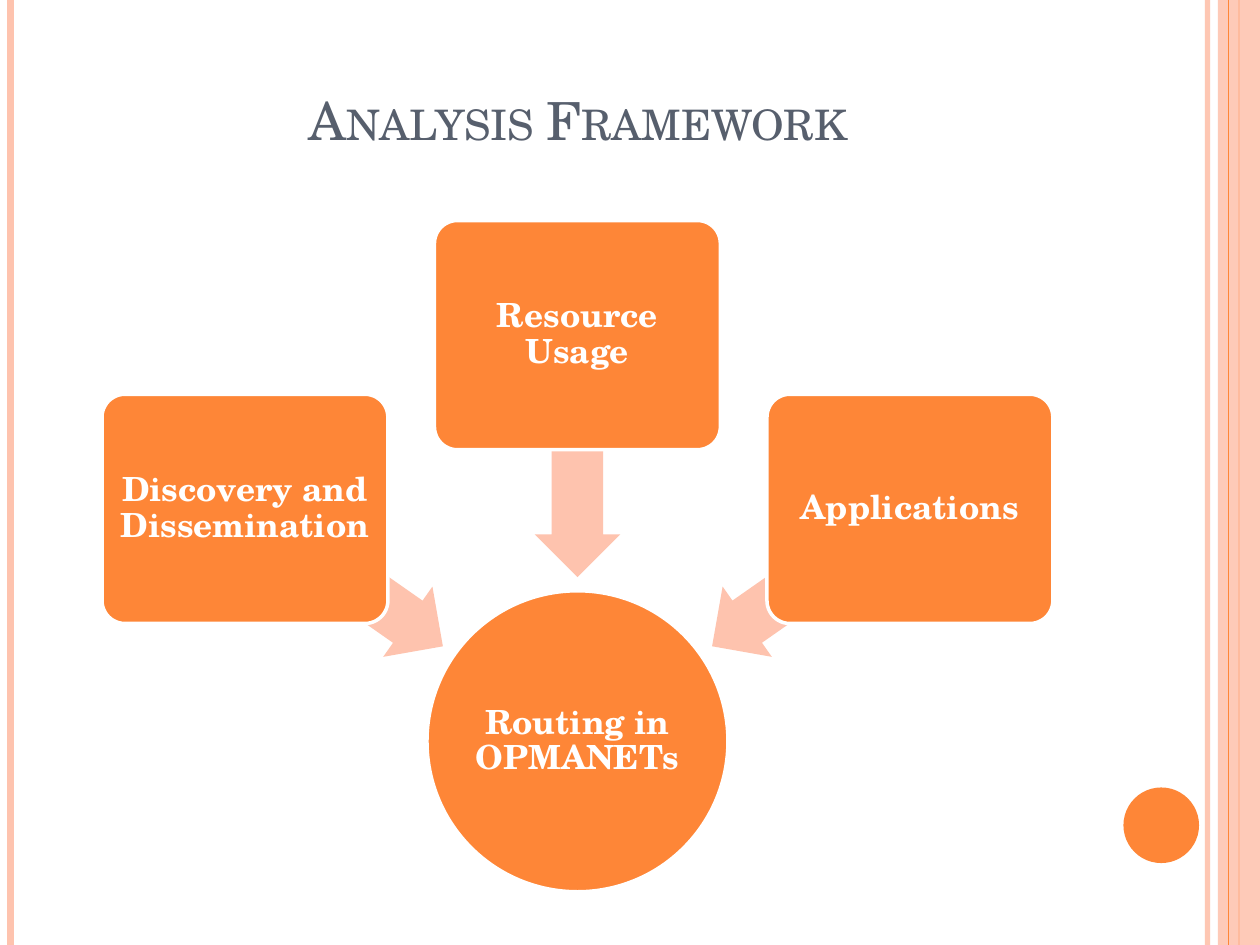
from dataclasses import dataclass

from lxml.etree import SubElement
from pptx import Presentation
from pptx.dml.color import RGBColor
from pptx.enum.shapes import MSO_CONNECTOR, MSO_SHAPE
from pptx.enum.text import MSO_ANCHOR, PP_ALIGN
from pptx.oxml.ns import qn
from pptx.util import Pt


@dataclass(frozen=True)
class Theme:
    font: str = "TeX Gyre Schola"
    accent: str = "FE8637"
    tint: str = "FEC3AE"
    white: str = "FFFFFF"
    title: str = "575F6D"
    title_size: float = 30
    node_size: float = 19
    outline: float = 2


class Deck:
    """Draws themed elements, measured in points, on the current slide."""

    def __init__(self, prs, theme):
        self.theme = theme
        self.height = prs.slide_height.pt
        self.s = prs.slides.add_slide(prs.slide_layouts[6])

    def paint(self, fill, color, opacity=100):
        fill.solid()
        fill.fore_color.rgb = RGBColor.from_string(color)
        if opacity < 100:
            clr = next(fill._xPr.iter(qn("a:srgbClr")))
            SubElement(clr, qn("a:alpha")).set("val", str(opacity * 1000))

    def label(self, sp, text, size, color, anchor, bold=False):
        tf = sp.text_frame
        tf.word_wrap = True
        tf.vertical_anchor = anchor
        tf.text = text
        p = tf.paragraphs[0]
        p.alignment = PP_ALIGN.CENTER
        r = p.runs[0]
        r.font.name = self.theme.font
        r.font.size = Pt(size)
        r.font.bold = bold
        r.font.color.rgb = RGBColor.from_string(color)
        return p

    def rule(self, x, width, color, opacity=100):
        line = self.s.shapes.add_connector(
            MSO_CONNECTOR.STRAIGHT, Pt(x), Pt(0), Pt(x), Pt(self.height))
        line.line.width = Pt(width)
        self.paint(line.line.fill, color, opacity)
        SubElement(line._element.spPr, qn("a:effectLst"))

    def shape(self, kind, x, y, w, h, color, opacity=100):
        sp = self.s.shapes.add_shape(kind, Pt(x), Pt(y), Pt(w), Pt(h))
        sp.shadow.inherit = False
        self.paint(sp.fill, color, opacity)
        sp.line.fill.background()
        return sp

    def title(self, text, x, y, w, h):
        sp = self.s.shapes.add_textbox(Pt(x), Pt(y), Pt(w), Pt(h))
        p = self.label(sp, text, self.theme.title_size, self.theme.title,
                       MSO_ANCHOR.BOTTOM)
        p.runs[0].font._element.set("cap", "small")

    def node(self, kind, text, x, y, w, h, inset):
        t = self.theme
        sp = self.shape(kind, x, y, w, h, t.accent)
        if kind == MSO_SHAPE.ROUNDED_RECTANGLE:
            sp.adjustments[0] = 0.1
        self.paint(sp.line.fill, t.white)
        sp.line.width = Pt(t.outline)
        tf = sp.text_frame
        tf.margin_left = tf.margin_right = Pt(inset)
        tf.margin_top = tf.margin_bottom = Pt(inset)
        p = self.label(sp, text, t.node_size, t.white, MSO_ANCHOR.MIDDLE, True)
        p.line_spacing = 0.9

    def arrow(self, cx, cy, w, h, rotation):
        sp = self.shape(MSO_SHAPE.LEFT_ARROW, cx - w / 2, cy - h / 2, w, h,
                        self.theme.tint)
        sp.adjustments[0] = 0.6
        sp.adjustments[1] = 0.5
        sp.rotation = rotation


def main():
    prs = Presentation()
    prs.slide_width, prs.slide_height = Pt(720), Pt(540)
    theme = Theme()
    deck = Deck(prs, theme)

    deck.rule(690, 3, theme.tint, 93)
    deck.rule(6, 4.5, theme.tint)
    deck.rule(708, 1.5, theme.accent)
    deck.shape(MSO_SHAPE.RECTANGLE, 696, 0, 24, 540, theme.tint, 87)
    deck.rule(702, 0.75, theme.accent)
    deck.shape(MSO_SHAPE.OVAL, 642, 450, 43.2, 43.2, theme.accent)
    deck.title("Analysis Framework", 36, 0, 588, 90)

    center, hub = 330, 172
    box_w, box_h, box_step, arrow_step = 163.4, 131, 190, 133.5
    deck.node(MSO_SHAPE.OVAL, "Routing in OPMANETs",
              center - hub / 2, 337.6, hub, hub, 0.75)
    factors = [
        ("Discovery and Dissemination", -1, 225.3, 329.7, 215),
        ("Resource Usage", 0, 126, 260.7, 270),
        ("Applications", 1, 225.3, 329.7, 325),
    ]
    for text, side, top, arrow_y, rotation in factors:
        deck.arrow(center + side * arrow_step, arrow_y, 138.2, 49, rotation)
        deck.node(MSO_SHAPE.ROUNDED_RECTANGLE, text,
                  center + side * box_step - box_w / 2, top, box_w, box_h, 2.8)

    prs.save("out.pptx")


if __name__ == "__main__":
    main()
